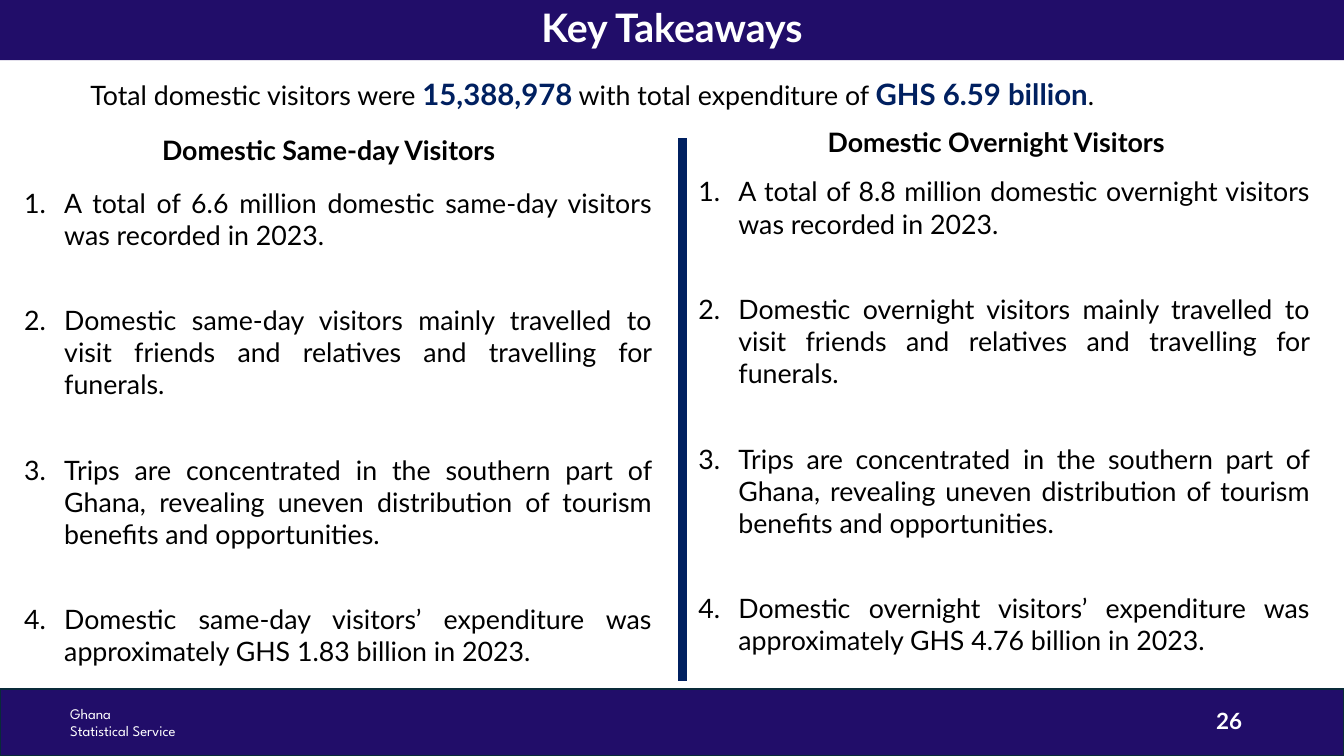
"""Builds the Key Takeaways slide on domestic visitors."""
from dataclasses import dataclass

import lxml.etree
import pptx
import pptx.dml.color
import pptx.enum.shapes
import pptx.enum.text
import pptx.oxml.ns
import pptx.util

Cm = pptx.util.Cm
Pt = pptx.util.Pt
RGB = pptx.dml.color.RGBColor.from_string
ALIGN = pptx.enum.text.PP_ALIGN
ANCHOR = pptx.enum.text.MSO_ANCHOR
RECT = pptx.enum.shapes.MSO_SHAPE.RECTANGLE
STRAIGHT = pptx.enum.shapes.MSO_CONNECTOR.STRAIGHT
qn = pptx.oxml.ns.qn


@dataclass(frozen=True)
class Theme:
    font: str = "Lato"
    footer_font: str = "League Spartan"
    band: str = "210D69"
    band_edge: str = "092A39"
    accent: str = "002060"
    ink: str = "000000"
    paper: str = "FFFFFF"
    title: float = 28
    figure: float = 21
    body: float = 19.1
    number: float = 16
    footer: float = 10.5


THEME = Theme()

COLUMNS = [
    ("Domestic Same-day Visitors", (2.31, 3.25, 11.94, 1.07), (0.36, 4.57, 16.31, 12.55), [
        "A total of 6.6 million domestic same-day visitors was recorded in 2023.",
        "Domestic same-day visitors mainly travelled to visit friends and relatives "
        "and travelling for funerals.",
        "Trips are concentrated in the southern part of Ghana, revealing uneven "
        "distribution of tourism benefits and opportunities.",
        "Domestic same-day visitors’ expenditure was approximately GHS 1.83 billion in 2023.",
    ]),
    ("Domestic Overnight Visitors ", (16.51, 3.05, 17.35, 1.07), (17.35, 4.29, 15.9, 12.55), [
        "A total of 8.8 million domestic overnight visitors was recorded in 2023.",
        "Domestic overnight visitors mainly travelled to visit friends and relatives "
        "and travelling for funerals.",
        "Trips are concentrated in the southern part of Ghana, revealing uneven "
        "distribution of tourism benefits and opportunities.",
        "Domestic overnight visitors’ expenditure was approximately GHS 4.76 billion in 2023.",
    ]),
]


def add_run(p, text, size=THEME.body, color=THEME.ink, bold=False, font=THEME.font):
    """Append one styled run to a paragraph."""
    r = p.add_run()
    r.text = text
    r.font.size = Pt(size)
    r.font.name = font
    r.font.bold = bold
    r.font.color.rgb = RGB(color)


def add_box(s, box, anchor=ANCHOR.TOP):
    """Add a wrapping text box and return its text frame."""
    tf = s.shapes.add_textbox(*map(Cm, box)).text_frame
    tf.word_wrap = True
    tf.vertical_anchor = anchor
    return tf


def add_rect(s, box, fill, edge=None):
    """Add a flat rectangle and return its text frame."""
    sp = s.shapes.add_shape(RECT, *map(Cm, box))
    sp.shadow.inherit = False
    sp.fill.solid()
    sp.fill.fore_color.rgb = RGB(fill)
    if edge:
        sp.line.color.rgb = RGB(edge)
        sp.line.width = Pt(1.5)
    else:
        sp.line.fill.background()
    return sp.text_frame


def add_divider(s, x, top, bottom):
    """Add the thick vertical line between the columns."""
    line = s.shapes.add_connector(STRAIGHT, Cm(x), Cm(top), Cm(x), Cm(bottom))
    line.line.color.rgb = RGB(THEME.accent)
    line.line.width = Pt(6)
    lxml.etree.SubElement(line._element.spPr, qn("a:effectLst"))


def add_heading(s, box, text):
    """Add a centred bold column heading."""
    p = add_box(s, box).paragraphs[0]
    p.alignment = ALIGN.CENTER
    add_run(p, text, bold=True)


def add_numbered_list(s, box, items):
    """Add a justified, automatically numbered list."""
    tf = add_rect(s, box, THEME.paper)
    tf.word_wrap = True
    tf.vertical_anchor = ANCHOR.TOP
    for i, item in enumerate(items):
        p = tf.add_paragraph() if i else tf.paragraphs[0]
        pPr = p._p.get_or_add_pPr()
        pPr.set("marL", str(Cm(1.01)))
        pPr.set("indent", str(-Cm(1.01)))
        lxml.etree.SubElement(pPr, qn("a:buFont"), typeface="+mj-lt")
        lxml.etree.SubElement(pPr, qn("a:buAutoNum"), type="arabicPeriod")
        p.alignment = ALIGN.JUSTIFY
        p.space_before = Pt(34.3 if i else 0)
        p.space_after = Pt(3.8)
        add_run(p, item)


def add_title(s, text):
    """Add the title band across the top."""
    tf = add_rect(s, (0, 0, 33.87, 1.52), THEME.band)
    tf.vertical_anchor = ANCHOR.MIDDLE
    p = tf.paragraphs[0]
    p.alignment = ALIGN.CENTER
    p.line_spacing = 0.9
    add_run(p, text, THEME.title, THEME.paper, True)


def add_summary(s):
    """Add the sentence with the two headline figures."""
    p = add_box(s, (2.03, 1.8, 31.84, 1.4)).paragraphs[0]
    add_run(p, "Total domestic visitors were ")
    add_run(p, "15,388,978", THEME.figure, THEME.accent, True)
    add_run(p, " with total expenditure of ")
    add_run(p, "GHS 6.59 billion", THEME.figure, THEME.accent, True)
    add_run(p, ".")


def add_footer(s, lines, number):
    """Add the footer band with the publisher and the page number."""
    add_rect(s, (0, 17.37, 33.87, 1.68), THEME.band, THEME.band_edge)
    tf = add_box(s, (1.52, 17.63, 5.69, 1.19))
    for i, text in enumerate(lines):
        p = tf.add_paragraph() if i else tf.paragraphs[0]
        add_run(p, text, THEME.footer, THEME.paper, font=THEME.footer_font)
    p = add_box(s, (30.23, 17.65, 1.32, 1.02), ANCHOR.MIDDLE).paragraphs[0]
    p.alignment = ALIGN.RIGHT
    add_run(p, number, THEME.number, THEME.paper, True)


def main():
    """Build and save the slide."""
    prs = pptx.Presentation()
    prs.slide_width, prs.slide_height = Cm(33.87), Cm(19.05)
    s = prs.slides.add_slide(prs.slide_layouts[6])
    add_footer(s, ["Ghana", "Statistical Service"], "26")
    add_divider(s, 17.2, 3.48, 17.17)
    for heading, heading_box, list_box, items in COLUMNS:
        add_heading(s, heading_box, heading)
        add_numbered_list(s, list_box, items)
    add_summary(s)
    add_title(s, "Key Takeaways")
    prs.save("out.pptx")


if __name__ == "__main__":
    main()
